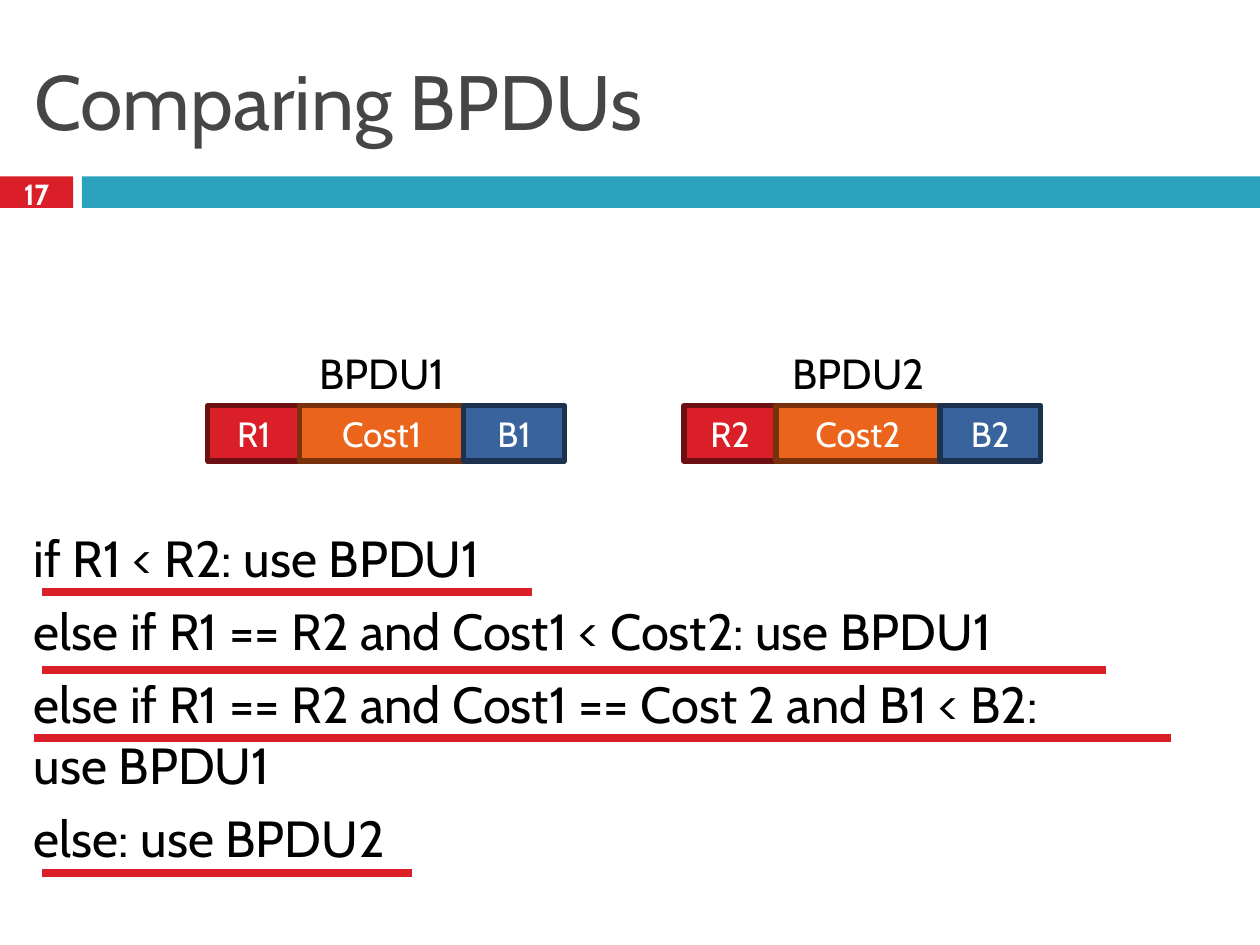
"""Build the slide that shows how two BPDUs are compared."""
from lxml import etree
from pptx import Presentation
from pptx.dml.color import RGBColor
from pptx.enum.shapes import MSO_CONNECTOR, MSO_SHAPE
from pptx.enum.text import MSO_ANCHOR, PP_ALIGN
from pptx.oxml.ns import qn
from pptx.util import Inches, Pt

RECTANGLE = MSO_SHAPE.RECTANGLE
STRAIGHT = MSO_CONNECTOR.STRAIGHT
LEFT, CENTER = PP_ALIGN.LEFT, PP_ALIGN.CENTER
TOP, MIDDLE = MSO_ANCHOR.TOP, MSO_ANCHOR.MIDDLE

RED = RGBColor(0xDA, 0x1F, 0x28)
DARK_RED = RGBColor(0x6D, 0x10, 0x14)
TEAL = RGBColor(0x2D, 0xA2, 0xBF)
ORANGE = RGBColor(0xEB, 0x64, 0x1B)
DARK_ORANGE = RGBColor(0x78, 0x31, 0x0B)
BLUE = RGBColor(0x39, 0x63, 0x9D)
DARK_BLUE = RGBColor(0x1C, 0x31, 0x4E)
GRAY = RGBColor(0x46, 0x46, 0x46)
BLACK = RGBColor(0, 0, 0)
WHITE = RGBColor(0xFF, 0xFF, 0xFF)


def write(shape, lines, size, color, align=CENTER, anchor=MIDDLE, wrap=True, bold=False, before=0):
    frame = shape.text_frame
    frame.word_wrap = wrap
    frame.vertical_anchor = anchor
    frame.text = "\n".join(lines)
    font_format = {"name": "Cabin", "size": Pt(size), "bold": bold}
    for paragraph in frame.paragraphs:
        paragraph.alignment = align
        paragraph.space_before = Pt(before)
        for run in paragraph.runs:
            run.font.color.rgb = color
            for name, value in font_format.items():
                setattr(run.font, name, value)


def add_box(shapes, left, top, width, height, fill, line=None):
    shape = shapes.add_shape(RECTANGLE, Inches(left), Inches(top), Inches(width), Inches(height))
    shape.shadow.inherit = False
    shape.fill.solid()
    shape.fill.fore_color.rgb = fill
    if line is None:
        shape.line.fill.background()
    else:
        shape.line.color.rgb = line
        shape.line.width = Pt(3)
    return shape


presentation = Presentation()
presentation.slide_width, presentation.slide_height = Inches(10), Inches(7.5)
slide = presentation.slides.add_slide(presentation.slide_layouts[5])
shapes = slide.shapes

add_box(shapes, 0, 1.4, 0.58, 0.25, RED)
add_box(shapes, 0.65, 1.4, 9.35, 0.25, TEAL)

title = shapes.title
title.left, title.top, title.width, title.height = map(Inches, (0.17, 0.25, 9.67, 1.08))
write(title, ["Comparing BPDUs"], 44, GRAY, align=LEFT)

page_number = shapes.add_textbox(Inches(0), Inches(1.37), Inches(0.58), Inches(0.33))
write(page_number, ["17"], 16.6, WHITE, bold=True)

rules = [
    "if R1 < R2: use BPDU1",
    "else if R1 == R2 and Cost1 < Cost2: use BPDU1",
    "else if R1 == R2 and Cost1 == Cost 2 and B1 < B2:\vuse BPDU1",
    "else: use BPDU2",
]
body = shapes.add_textbox(Inches(0.17), Inches(4.13), Inches(9.67), Inches(3.2))
write(body, rules, 29, BLACK, align=LEFT, anchor=TOP, before=7)

fields = [
    ("R", 0.73, RED, DARK_RED),
    ("Cost", 1.3, ORANGE, DARK_ORANGE),
    ("B", 0.8, BLUE, DARK_BLUE),
]
for number, left, label_left in ((1, 1.65, 2.37), (2, 5.43, 6.15)):
    group = shapes.add_group_shape()
    for name, width, fill, line in fields:
        field = add_box(group.shapes, left, 3.22, width, 0.44, fill, line)
        write(field, [f"{name}{number}"], 20, WHITE)
        left += width
    label = shapes.add_textbox(Inches(label_left), Inches(2.71), Inches(1.33), Inches(0.5))
    write(label, [f"BPDU{number}"], 24, BLACK, anchor=TOP, wrap=False)

for right, left, height in ((4.22, 0.33, 4.7), (8.78, 0.33, 5.32), (9.29, 0.27, 5.86), (3.27, 0.33, 6.93)):
    underline = shapes.add_connector(STRAIGHT, Inches(right), Inches(height), Inches(left), Inches(height))
    underline.line.color.rgb = RED
    underline.line.width = Pt(4.5)
    etree.SubElement(underline._element.spPr, qn("a:effectLst"))

presentation.save("out.pptx")
